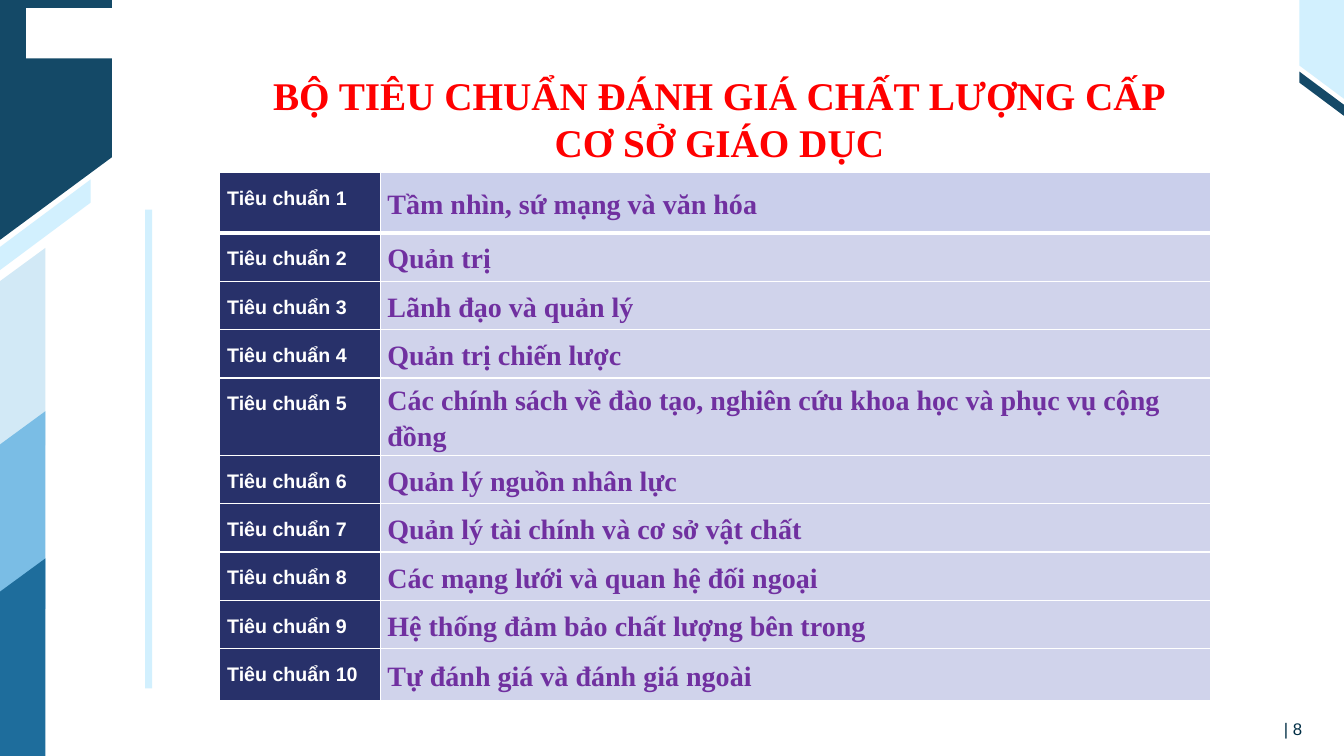
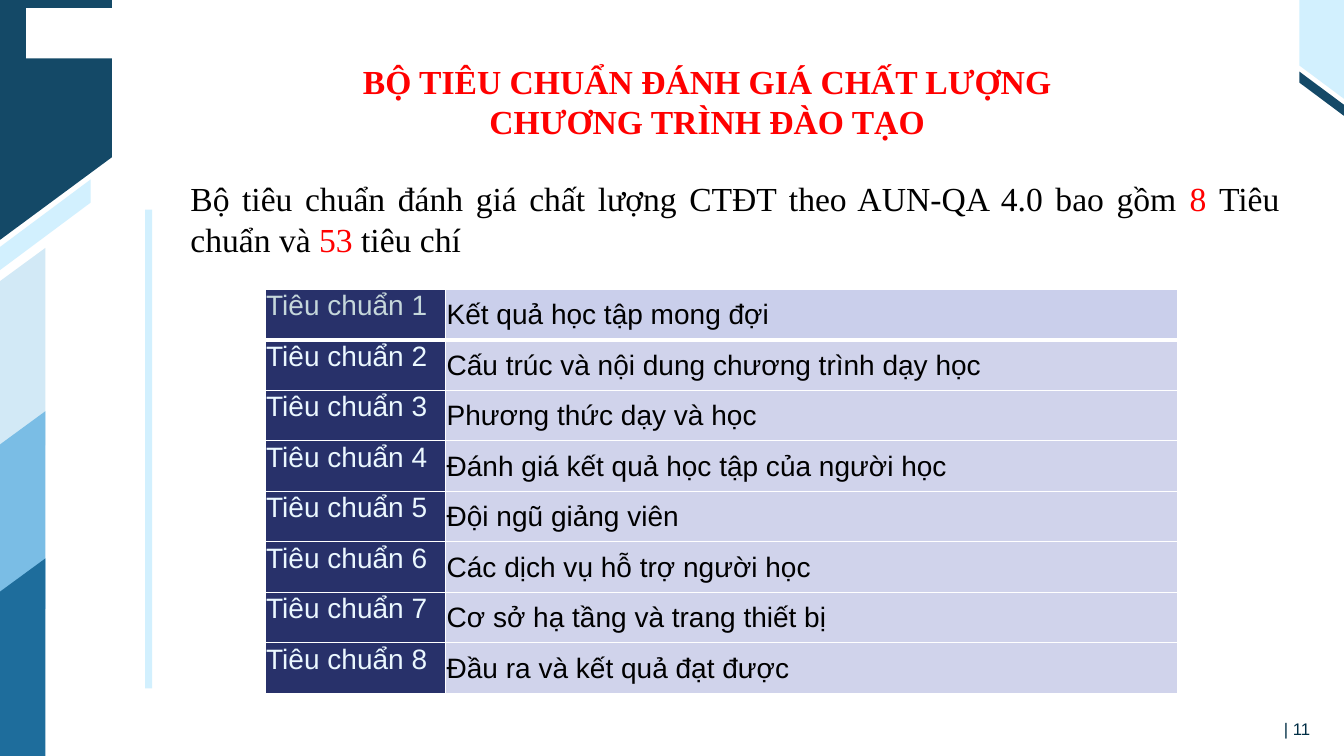
from dataclasses import dataclass

import pptx
import pptx.dml.color
import pptx.enum.shapes
import pptx.enum.text
import pptx.oxml
import pptx.oxml.ns
import pptx.presentation
import pptx.shapes.base
import pptx.slide
import pptx.table
import pptx.text.text
import pptx.util

Rgb = pptx.dml.color.RGBColor
Align = pptx.enum.text.PP_ALIGN
Anchor = pptx.enum.text.MSO_ANCHOR

WHITE = Rgb(0xFF, 0xFF, 0xFF)
BLACK = Rgb(0x00, 0x00, 0x00)
RED = Rgb(0xFF, 0x00, 0x00)
NAVY = Rgb(0x14, 0x49, 0x67)
BLUE = Rgb(0x1E, 0x6D, 0x9C)
SKY = Rgb(0x7A, 0xBD, 0xE5)
PALE = Rgb(0xD2, 0xE9, 0xF6)
ICE = Rgb(0xD2, 0xF0, 0xFE)
INK = Rgb(0x01, 0x2E, 0x45)
INDIGO = Rgb(0x28, 0x31, 0x6A)
HEAD = Rgb(0xCA, 0xCF, 0xEB)
LILAC = Rgb(0xD0, 0xD3, 0xEB)
PURPLE = Rgb(0x70, 0x30, 0xA0)
GREY = Rgb(0xC5, 0xD7, 0xDB)
FROST = Rgb(0xEB, 0xF8, 0xFF)

SERIF = "Times New Roman"
SANS = "Arial"
WIDE = pptx.util.Inches(13.33)
HIGH = pptx.util.Inches(7.5)


@dataclass(frozen=True)
class Box:
    left: float
    top: float
    width: float
    height: float


@dataclass(frozen=True)
class Shard:
    color: Rgb
    points: tuple[tuple[float, float], ...]


@dataclass(frozen=True)
class Look:
    font: str
    size: float
    color: Rgb
    bold: bool = False
    align: Align = Align.LEFT
    line: float = 1.0
    before: float = 0
    after: float = 0


@dataclass(frozen=True)
class Column:
    width: float
    look: Look
    first: Rgb
    fill: Rgb
    anchor: Anchor
    inset: tuple[float, float]


@dataclass(frozen=True)
class Grid:
    left: float
    top: float
    columns: tuple[Column, Column]
    rows: tuple[float, ...]
    head: Rgb
    names: tuple[str, ...]


@dataclass(frozen=True)
class Page:
    number: int
    title: tuple[str, str]
    size: float
    place: Box
    grid: Grid
    intro: tuple[tuple[str, Rgb], ...] = ()


def step(top: float, color: Rgb) -> Shard:
    return Shard(color, ((0, top + 4.4), (3.38, top), (3.38, top + 26.13), (0, top + 26.13)))


SHARDS = (
    Shard(NAVY, ((0, 0), (8.33, 0), (8.33, 20.8), (0, 31.73))),
    Shard(ICE, ((0, 32.67), (6.75, 23.73), (6.75, 26.8), (0, 35.73))),
    Shard(NAVY, ((96.68, 9.47), (100, 13.87), (100, 15.33), (96.68, 10.93))),
    Shard(ICE, ((96.68, 0), (100, 0), (100, 13.07), (96.68, 8.67))),
    step(32.8, PALE),
    step(54.4, SKY),
    step(73.87, BLUE),
)
BARS = ((Box(1.95, 1.07, 13.43, 6.67), WHITE), (Box(10.8, 27.73, 0.53, 63.33), ICE))
FOOT = Box(95, 94.4, 5, 4)
INTRO = Box(13.43, 22.93, 82.5, 68.93)


def across(share: float) -> pptx.util.Emu:
    return pptx.util.Emu(round(WIDE * share / 100))


def down(share: float) -> pptx.util.Emu:
    return pptx.util.Emu(round(HIGH * share / 100))


def frame(box: Box) -> tuple[int, int, int, int]:
    return across(box.left), down(box.top), across(box.width), down(box.height)


def paint(shape: pptx.shapes.base.BaseShape, color: Rgb) -> None:
    shape.shadow.inherit = False
    shape.fill.solid()
    shape.fill.fore_color.rgb = color
    shape.line.fill.background()


def style(para: pptx.text.text._Paragraph, look: Look, color: Rgb | None = None) -> None:
    para.alignment = look.align
    para.line_spacing = look.line
    para.space_before = pptx.util.Pt(look.before)
    para.space_after = pptx.util.Pt(look.after)
    para.font.name = look.font
    para.font.size = pptx.util.Pt(look.size)
    para.font.bold = look.bold
    para.font.color.rgb = color or look.color


def write(slide: pptx.slide.Slide, box: Box, lines: tuple[str, ...], look: Look,
          anchor: Anchor = Anchor.TOP) -> pptx.text.text.TextFrame:
    text = slide.shapes.add_textbox(*frame(box)).text_frame
    text.word_wrap = True
    text.vertical_anchor = anchor
    text.text = "\n".join(lines)
    for para in text.paragraphs:
        style(para, look)
    return text


def edge(cell: pptx.table._Cell, side: str, width: float) -> None:
    space = pptx.oxml.ns.nsdecls("a")
    cell._tc.get_or_add_tcPr().append(pptx.oxml.parse_xml(
        f'<a:ln{side} {space} w="{pptx.util.Pt(width)}"><a:solidFill>'
        f'<a:srgbClr val="{WHITE}"/></a:solidFill></a:ln{side}>'))


def fill(cell: pptx.table._Cell, text: str, row: int, column: Column, head: Rgb) -> None:
    thick = {(0, "B"): 3, (1, "T"): 3}
    for side in "LRTB":
        edge(cell, side, thick.get((row, side), 1))
    cell.fill.solid()
    cell.fill.fore_color.rgb = head if row == 0 and column.fill == LILAC else column.fill
    cell.vertical_anchor = column.anchor
    side, top = column.inset
    cell.margin_left = cell.margin_right = pptx.util.Inches(side)
    cell.margin_top = pptx.util.Inches(top)
    cell.margin_bottom = 0
    cell.text = text
    style(cell.text_frame.paragraphs[0], column.look, column.first if row == 0 else None)


def tabulate(slide: pptx.slide.Slide, grid: Grid) -> None:
    box = Box(grid.left, grid.top, sum(c.width for c in grid.columns), sum(grid.rows))
    table = slide.shapes.add_table(len(grid.rows), len(grid.columns), *frame(box)).table
    table.first_row = False
    table.horz_banding = False
    for index, column in enumerate(grid.columns):
        table.columns[index].width = across(column.width)
    for row, (height, name) in enumerate(zip(grid.rows, grid.names)):
        table.rows[row].height = down(height)
        for index, text in enumerate((f"Tiêu chuẩn {row + 1}", name)):
            fill(table.cell(row, index), text, row, grid.columns[index], grid.head)


def adorn(slide: pptx.slide.Slide, number: int) -> None:
    for shard in SHARDS:
        points = [(across(x), down(y)) for x, y in shard.points]
        form = slide.shapes.build_freeform(*points[0])
        form.add_line_segments(points[1:])
        paint(form.convert_to_shape(), shard.color)
    for box, color in BARS:
        paint(slide.shapes.add_shape(pptx.enum.shapes.MSO_SHAPE.RECTANGLE, *frame(box)), color)
    text = write(slide, FOOT, (f"| {number}",), Look(SANS, 12, INK))
    text.margin_left = pptx.util.Inches(0.07)


def build(deck: pptx.presentation.Presentation, page: Page) -> None:
    slide = deck.slides.add_slide(deck.slide_layouts[6])
    adorn(slide, page.number)
    if page.intro:
        text = write(slide, INTRO, ("",), Look(SERIF, 24, BLACK, align=Align.JUSTIFY))
        for words, color in page.intro:
            run = text.paragraphs[0].add_run()
            run.text = words
            run.font.color.rgb = color
    look = Look(SERIF, page.size, RED, True, Align.CENTER)
    write(slide, page.place, page.title, look, Anchor.MIDDLE)
    tabulate(slide, page.grid)


SCHOOL = Grid(
    16.3, 22.8,
    (Column(12, Look(SANS, 14, WHITE, True, Align.JUSTIFY, 1.5, 0, 3),
            WHITE, INDIGO, Anchor.TOP, (0.08, 0.04)),
     Column(61.8, Look(SERIF, 20, PURPLE, True, line=1.15, after=6),
            PURPLE, LILAC, Anchor.MIDDLE, (0.07, 0))),
    (8, *[6.4] * 3, 10.2, *[6.4] * 4, 6.8),
    HEAD,
    ("Tầm nhìn, sứ mạng và văn hóa",
     "Quản trị",
     "Lãnh đạo và quản lý",
     "Quản trị chiến lược",
     "Các chính sách về đào tạo, nghiên cứu khoa học và phục vụ cộng đồng",
     "Quản lý nguồn nhân lực",
     "Quản lý tài chính và cơ sở vật chất",
     "Các mạng lưới và quan hệ đối ngoại",
     "Hệ thống đảm bảo chất lượng bên trong",
     "Tự đánh giá và đánh giá ngoài"),
)
COURSE = Grid(
    19.73, 38.27,
    (Column(13.43, Look(SANS, 20, FROST), GREY, INDIGO, Anchor.TOP, (0.01, 0.01)),
     Column(54.45, Look(SANS, 20, BLACK), BLACK, LILAC, Anchor.MIDDLE, (0.01, 0.01))),
    (6.68,) * 8,
    HEAD,
    ("Kết quả học tập mong đợi",
     "Cấu trúc và nội dung chương trình dạy học",
     "Phương thức dạy và học",
     "Đánh giá kết quả học tập của người học",
     "Đội ngũ giảng viên",
     "Các dịch vụ hỗ trợ người học",
     "Cơ sở hạ tầng và trang thiết bị",
     "Đầu ra và kết quả đạt được"),
)
PAGES = (
    Page(8, ("BỘ TIÊU CHUẨN ĐÁNH GIÁ CHẤT LƯỢNG CẤP", "CƠ SỞ GIÁO DỤC"), 28,
         Box(19.13, 8.67, 68.78, 13.87), SCHOOL),
    Page(11, ("BỘ TIÊU CHUẨN ĐÁNH GIÁ CHẤT LƯỢNG", "CHƯƠNG TRÌNH ĐÀO TẠO"), 24,
         Box(16.5, 7.33, 72.23, 12.13), COURSE,
         (("Bộ tiêu chuẩn đánh giá chất lượng CTĐT theo AUN-QA 4.0 bao gồm ", BLACK),
          ("8 ", RED), ("Tiêu chuẩn và ", BLACK), ("53 ", RED), ("tiêu chí", BLACK))),
)


def main() -> None:
    deck = pptx.Presentation()
    deck.slide_width, deck.slide_height = WIDE, HIGH
    for page in PAGES:
        build(deck, page)
    deck.save("out.pptx")


if __name__ == "__main__":
    main()
